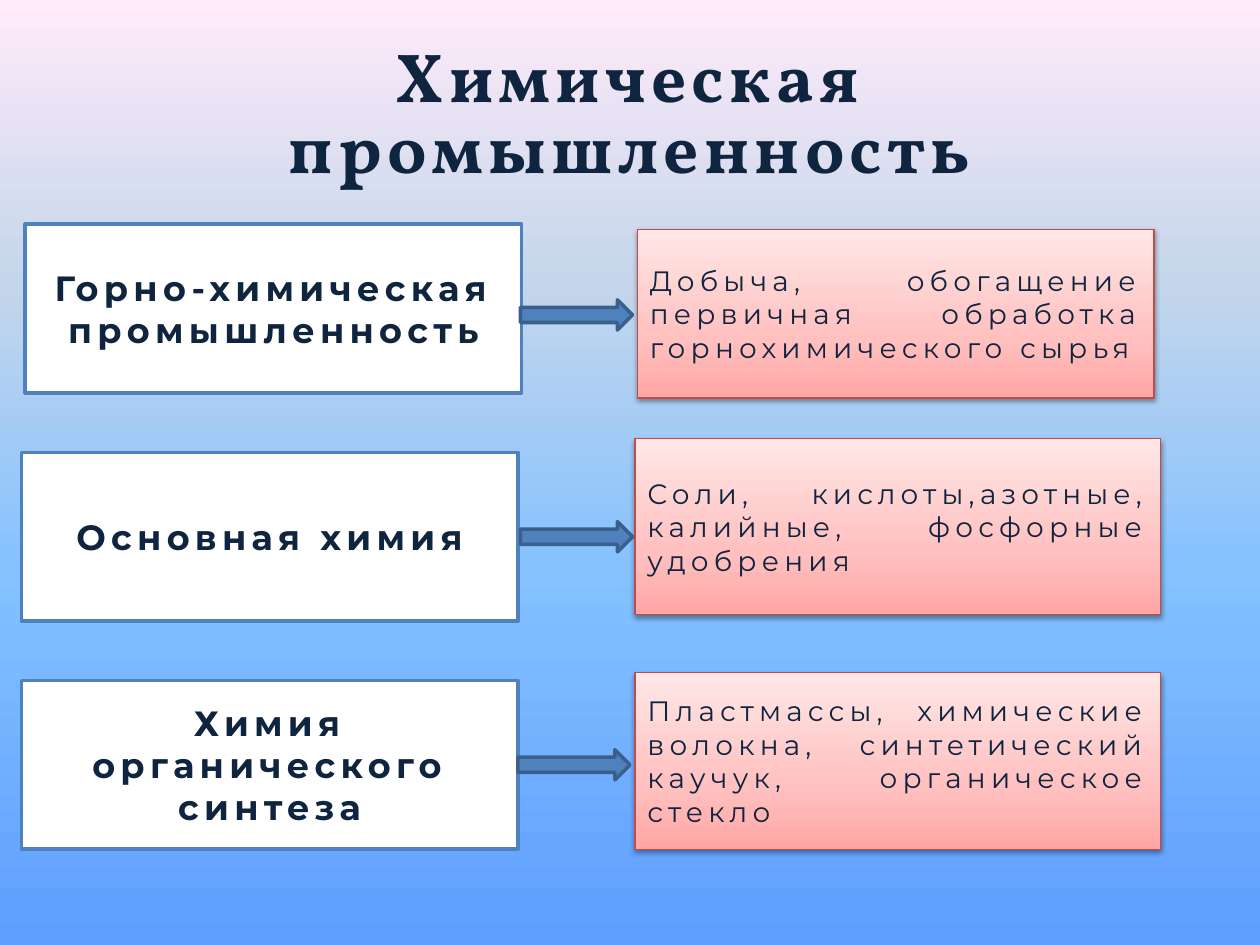
from lxml.etree import SubElement as Sub
from pptx import Presentation
from pptx.dml.color import RGBColor as RGB
from pptx.enum.shapes import MSO_SHAPE as Shape
from pptx.enum.text import MSO_ANCHOR as Anchor, MSO_AUTO_SIZE as Fit, PP_ALIGN as Align
from pptx.oxml.ns import qn
from pptx.util import Inches, Pt

NAVY = RGB(0x0F, 0x24, 0x3E)
PALE = RGB(0xF4, 0xF6, 0xF9)
WHITE = RGB(0xFF, 0xFF, 0xFF)
BLUE = RGB(0x4F, 0x81, 0xBD)
STEEL = RGB(0x3A, 0x5F, 0x8C)
RED = RGB(0xBF, 0x4C, 0x48)
BLACK = RGB(0, 0, 0)
SKY = [(0, RGB(0x5E, 0x9E, 0xFF)), (40, RGB(0x85, 0xC2, 0xFF)),
       (70, RGB(0xC4, 0xD6, 0xEB)), (100, RGB(0xFF, 0xEB, 0xFA))]
ROSE = [(0, RGB(0xFF, 0xA6, 0xA5)), (35, RGB(0xFF, 0xC0, 0xBF)),
        (100, RGB(0xFF, 0xE7, 0xE7))]

# Branch name, its products, then the places of both boxes and the arrow
BRANCH = Inches(3.94), Inches(1.34)
ARROW = Inches(0.89), Inches(0.24)
ROWS = [
    ("Горно-химическая промышленность",
     "Добыча, обогащение первичная обработка горнохимического сырья",
     (0.2, 1.78), (5.06, 1.82, 4.1, 1.34), (4.13, 2.38)),
    ("Основная химия",
     "Соли, кислоты,азотные, калийные, фосфорные удобрения",
     (0.17, 3.59), (5.04, 3.48, 4.17, 1.4), (4.13, 4.14)),
    ("Химия органического синтеза",
     "Пластмассы, химические волокна, синтетический каучук, органическое стекло",
     (0.17, 5.4), (5.04, 5.34, 4.17, 1.4), (4.11, 5.95)),
]


def tint(root, color):
    """Add a solid colour element and return its colour node."""
    return Sub(root, qn("a:srgbClr"), val=str(color))


def blend(fill, root, stops):
    """Fill with a bottom-to-top gradient of any number of stops."""
    fill.gradient()
    fill.gradient_angle = 90
    marks = root.find(".//" + qn("a:gsLst"))
    for old in list(marks):
        marks.remove(old)
    for pos, color in stops:
        tint(Sub(marks, qn("a:gs"), pos=str(pos * 1000)), color)


def write(frame, text, size=20, font="Montserrat", bold=False, align=Align.CENTER,
          lines=None):
    frame.word_wrap = True
    frame.auto_size = Fit.NONE
    frame.vertical_anchor = Anchor.MIDDLE
    par = frame.paragraphs[0]
    par.alignment = align
    par.line_spacing = lines
    run = par.add_run()
    run.text = text
    props = run.font._element
    props.set("spc", "300")
    # Thin pale outline around the letters
    edge = Sub(props, qn("a:ln"), w=str(Pt(0.9)))
    tint(Sub(edge, qn("a:solidFill")), PALE)
    run.font.size = Pt(size)
    run.font.name = font
    run.font.bold = bold
    run.font.color.rgb = NAVY


class Deck:
    def __init__(self):
        self.show = Presentation()
        self.show.slide_width, self.show.slide_height = Inches(10), Inches(7.5)
        self.slide = self.show.slides.add_slide(self.show.slide_layouts[5])
        blend(self.slide.background.fill, self.slide._element, SKY)

    def title(self, text):
        head = self.slide.shapes.title
        head.left, head.top = Inches(0.5), Inches(0.3)
        head.width, head.height = Inches(9), Inches(1.25)
        write(head.text_frame, text, size=39.6, font="Vollkorn", bold=True, lines=0.86)

    def shape(self, kind, x, y, size, fill, line, width):
        item = self.slide.shapes.add_shape(kind, Inches(x), Inches(y), *size)
        item.shadow.inherit = False
        if isinstance(fill, list):
            blend(item.fill, item._element, fill)
        else:
            item.fill.solid()
            item.fill.fore_color.rgb = fill
        item.line.color.rgb = line
        item.line.width = Pt(width)
        return item

    def branch(self, text, x, y):
        box = self.shape(Shape.RECTANGLE, x, y, BRANCH, WHITE, BLUE, 2)
        write(box.text_frame, text, bold=True)

    def goods(self, text, x, y, wide, high):
        size = Inches(wide), Inches(high)
        box = self.shape(Shape.RECTANGLE, x, y, size, ROSE, RED, 0.75)
        # Soft shadow below the box
        glow = Sub(box._element.find(".//" + qn("a:effectLst")), qn("a:outerShdw"),
                   blurRad=str(Pt(3.1)), dist=str(Pt(1.6)), dir="5400000",
                   rotWithShape="0")
        Sub(tint(glow, BLACK), qn("a:alpha"), val="38000")
        write(box.text_frame, text, size=16, align=Align.JUSTIFY)

    def arrow(self, x, y):
        self.shape(Shape.RIGHT_ARROW, x, y, ARROW, BLUE, STEEL, 2)


def main():
    deck = Deck()
    deck.title("Химическая промышленность")
    for name, goods, left, right, arrow in ROWS:
        deck.branch(name, *left)
        deck.goods(goods, *right)
        deck.arrow(*arrow)
    deck.show.save("out.pptx")


if __name__ == "__main__":
    main()
